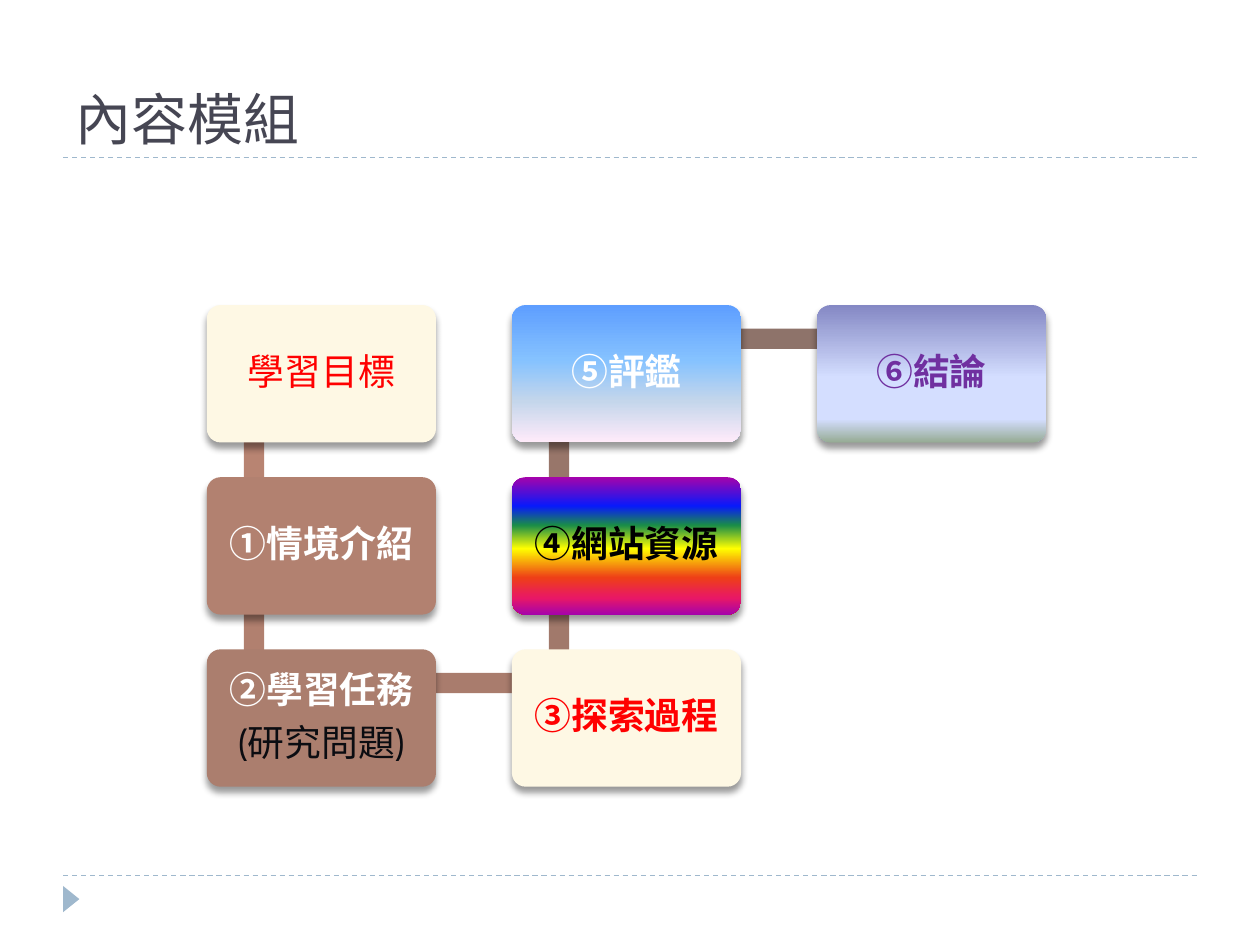
from lxml import etree
from pptx import Presentation
from pptx import util as u
from pptx.dml.color import RGBColor
from pptx.enum import dml, shapes, text
from pptx.oxml.ns import qn

# Content: column, row, text, text colours per line, bold per line, fill
TITLE = "內容模組"
CREAM = "FEF8E4"
RAINBOW = [(0, "A603AB"), (21, "0819FB"), (35, "1A8D48"), (52, "FFFF00"),
           (73, "EE3F17"), (88, "E81766"), (100, "A603AB")]
SKY = [(0, "5E9EFF"), (40, "85C2FF"), (70, "C4D6EB"), (100, "FFEBFA")]
LAVENDER = [(0, "8488C4"), (53, "D4DEFF"), (83, "D4DEFF"), (100, "96AB94")]
STEPS = [
    (0, 0, [("學習目標", "FF0000", False)], CREAM),
    (0, 1, [("①情境介紹", "FFFFFF", True)], "B28170"),
    (0, 2, [("②學習任務", "FFFFFF", True), ("(研究問題)", "0B0C11", False)], "AB7E6E"),
    (1, 2, [("③探索過程", "FF0000", True)], CREAM),
    (1, 1, [("④網站資源", "000000", True)], RAINBOW),
    (1, 0, [("⑤評鑑", "FFFFFF", True)], SKY),
    (2, 0, [("⑥結論", "7030A0", True)], LAVENDER),
]
BARS = ["B88472", "B1806F", "A97C6D", "A1796B", "98766A", "8E736A"]
ACCENT = "9FB8CD"

# Grid, in centimetres
LEFT, TOP = 4.17, 6.15
PITCH_X, PITCH_Y = 6.15, 3.47
BOX_W, BOX_H = 4.62, 2.77
BAR_DX, BAR_DY, BAR_T = 0.95, 0.68, 0.41


def rgb(value):
    return RGBColor.from_string(value)


def add_effects(s, shadow=False):
    effects = etree.SubElement(s._element.spPr, qn("a:effectLst"))
    if shadow:
        sh = etree.SubElement(effects, qn("a:outerShdw"), blurRad=str(u.Pt(4)),
                              dist=str(u.Pt(3.4)), dir="5400000", rotWithShape="0")
        clr = etree.SubElement(sh, qn("a:srgbClr"), val="000000")
        etree.SubElement(clr, qn("a:alpha"), val="40000")


def paint(s, fill):
    if isinstance(fill, str):
        s.fill.solid()
        s.fill.fore_color.rgb = rgb(fill)
        return
    s.fill.gradient()
    s.fill.gradient_angle = 270
    stops = s._element.spPr.find(qn("a:gradFill")).find(qn("a:gsLst"))
    for old in list(stops):
        stops.remove(old)
    for pos, color in fill:
        gs = etree.SubElement(stops, qn("a:gs"), pos=str(pos * 1000))
        etree.SubElement(gs, qn("a:srgbClr"), val=color)


def add_shape(kind, x, y, w, h, fill, rotation=0, shadow=False):
    s = sp.add_shape(kind, u.Cm(x), u.Cm(y), u.Cm(w), u.Cm(h))
    s.rotation = rotation
    paint(s, fill)
    s.line.fill.background()
    add_effects(s, shadow)
    return s


def style(p, size, font, color, bold=False):
    for r in p.runs:
        r.font.size = u.Pt(size)
        r.font.name = font
        r.font.bold = bold
        r.font.color.rgb = rgb(color)


def corner(step):
    return LEFT + step[0] * PITCH_X, TOP + step[1] * PITCH_Y


def add_bar(a, b, color):
    (x1, y1), (x2, y2) = corner(a), corner(b)
    length = abs(x2 - x1) + abs(y2 - y1) - 0.03
    rotation = 0 if y1 == y2 else 90 if y2 > y1 else 270
    cx, cy = (x1 + x2) / 2 + BAR_DX, (y1 + y2) / 2 + BAR_DY
    add_shape(shapes.MSO_SHAPE.RECTANGLE, cx - length / 2, cy - BAR_T / 2,
              length, BAR_T, color, rotation)


def add_box(step):
    lines, fill = step[2:]
    s = add_shape(shapes.MSO_SHAPE.ROUNDED_RECTANGLE, *corner(step), BOX_W, BOX_H,
                  fill, shadow=True)
    s.adjustments[0] = 0.1
    tf = s.text_frame
    tf.word_wrap = True
    tf.vertical_anchor = text.MSO_ANCHOR.MIDDLE
    tf.margin_left = tf.margin_right = tf.margin_top = tf.margin_bottom = u.Cm(0.23)
    tf.text = "\n".join(line[0] for line in lines)
    for p, (_, color, bold) in zip(tf.paragraphs, lines):
        p.alignment = text.PP_ALIGN.CENTER
        p.line_spacing = 0.9
        p.space_after = u.Pt(7)
        # Spacing after as a share of the text size
        after = p._p.pPr.find(qn("a:spcAft"))
        after.remove(after[0])
        etree.SubElement(after, qn("a:spcPct"), val="35000")
        style(p, 21, "Cabin", color, bold)


prs = Presentation()
prs.slide_width, prs.slide_height = u.Cm(25.4), u.Cm(19.05)
sp = prs.slides.add_slide(prs.slide_layouts[6]).shapes

# Dashed rules and corner marker
for y in (17.65, 3.18):
    s = sp.add_connector(shapes.MSO_CONNECTOR.STRAIGHT,
                         u.Cm(1.27), u.Cm(y), u.Cm(24.13), u.Cm(y))
    s.line.color.rgb = rgb(ACCENT)
    s.line.width = u.Pt(0.75)
    s.line.dash_style = dml.MSO_LINE.DASH
    add_effects(s)
add_shape(shapes.MSO_SHAPE.ISOSCELES_TRIANGLE, 1.17, 17.96, 0.53, 0.33, ACCENT, 90)

# Path of steps: each bar lies behind the boxes it joins
for i, step in enumerate(STEPS):
    if i < len(BARS):
        add_bar(step, STEPS[i + 1], BARS[i])
    add_box(step)

# Title
s = sp.add_textbox(u.Cm(1.27), u.Cm(0.64), u.Cm(22.86), u.Cm(2.54))
tf = s.text_frame
tf.word_wrap = True
tf.vertical_anchor = text.MSO_ANCHOR.BOTTOM
tf.text = TITLE
style(tf.paragraphs[0], 32, "TeX Gyre Bonum", "464653")

prs.save("out.pptx")
